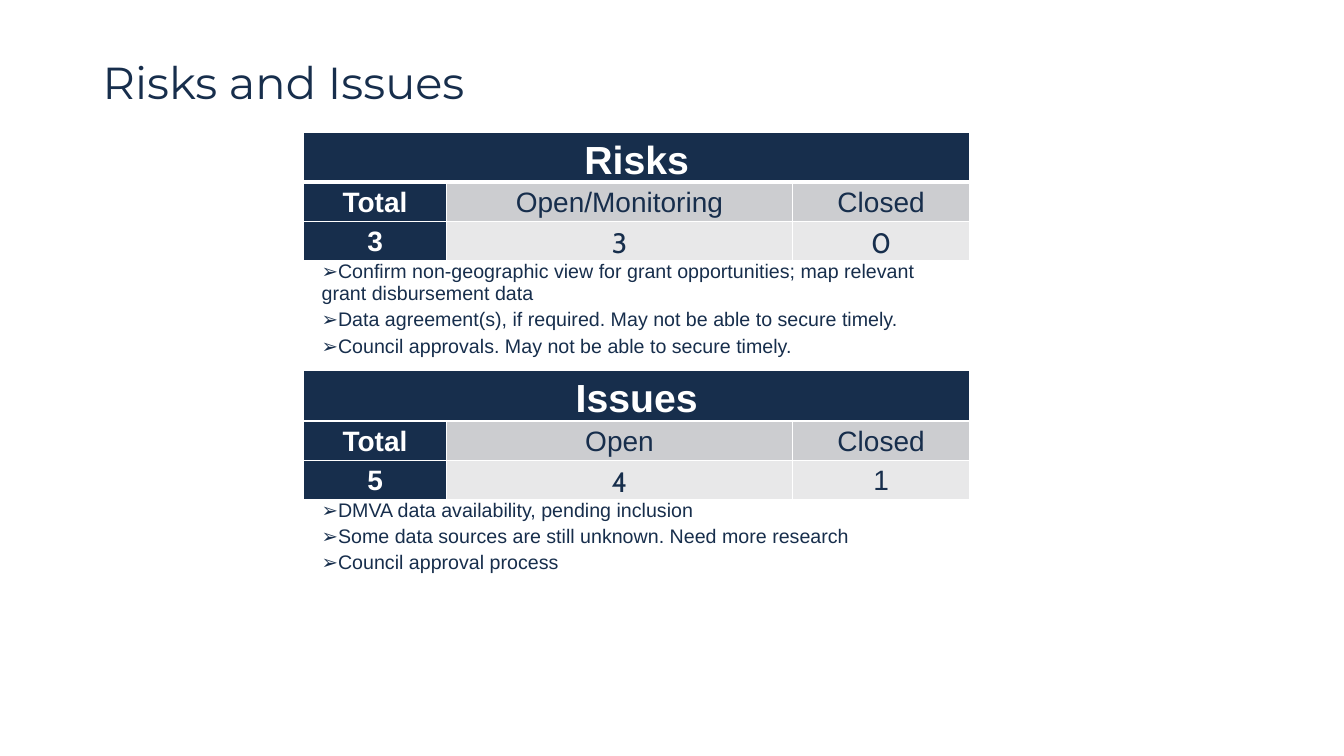
from lxml import etree
from pptx import Presentation
from pptx.dml.color import RGBColor
from pptx.enum.text import PP_ALIGN
from pptx.oxml.ns import qn
from pptx.util import Pt

PX = 9144
NAVY = RGBColor(0x17, 0x2E, 0x4C)
GREY = RGBColor(0xCC, 0xCD, 0xD0)
PALE = RGBColor(0xE8, 0xE8, 0xE9)
WHITE = RGBColor(0xFF, 0xFF, 0xFF)
CENTER = PP_ALIGN.CENTER

COLS = [142, 343, 176]
ROWS = [[47, 39, 33, 109], [47, 39, 33, 107]]
BLOCKS = [
    ("Risks", ["Total", "Open/Monitoring", "Closed"], ["3", "3", "0"],
     ["Arial", "Cabin", "Cabin"],
     ["Confirm non-geographic view for grant opportunities; map relevant grant disbursement data",
      "Data agreement(s), if required. May not be able to secure timely.",
      "Council approvals. May not be able to secure timely."]),
    ("Issues", ["Total", "Open", "Closed"], ["5", "4", "1"],
     ["Arial", "Cabin", "Arial"],
     ["DMVA data availability, pending inclusion",
      "Some data sources are still unknown. Need more research",
      "Council approval process"]),
]


def style(para, font, size, color, bold=False):
    """Format every run of a paragraph."""
    for run in para.runs:
        run.font.name = font
        run.font.size = Pt(size)
        run.font.color.rgb = color
        run.font.bold = bold


def edge(cell, top=1, bottom=1):
    """Give a cell white borders of the given point widths."""
    props = cell._tc.get_or_add_tcPr()
    for side, width in zip("LRTB", (1, 1, top, bottom)):
        line = etree.SubElement(props, qn(f"a:ln{side}"), w=str(Pt(width)))
        fill = etree.SubElement(line, qn("a:solidFill"))
        etree.SubElement(fill, qn("a:srgbClr"), val=str(WHITE))


def paint(cell, color):
    """Set the fill and margins of a cell."""
    cell.fill.solid()
    cell.fill.fore_color.rgb = color
    cell.margin_left = cell.margin_right = 18 * PX
    cell.margin_top = cell.margin_bottom = 0


def label(cell, text, font, size, color, back, bold):
    """Fill a cell with one centred line."""
    paint(cell, back)
    cell.text_frame.text = text
    para = cell.text_frame.paragraphs[0]
    para.alignment = CENTER
    para.line_spacing = 1.15
    para.space_after = Pt(3)
    style(para, font, size, color, bold)


def notes(cell, items):
    """Fill a cell with arrow bullets."""
    paint(cell, WHITE)
    cell.text_frame.text = "\n".join(items)
    for para in cell.text_frame.paragraphs:
        para.space_after = Pt(3)
        props = para._p.get_or_add_pPr()
        props.set("marL", "0")
        props.set("indent", "0")
        etree.SubElement(props, qn("a:buFont"), typeface="Arial")
        etree.SubElement(props, qn("a:buChar"), char="➢")
        style(para, "Arial", 14, NAVY)


def block(table, top, data):
    """Fill four table rows with a heading, counts and notes."""
    name, heads, counts, fonts, items = data
    for row in (top, top + 3):
        table.cell(row, 0).merge(table.cell(row, 2))
    label(table.cell(top, 0), name, "Arial", 28, WHITE, NAVY, True)
    for col, (head, count, font) in enumerate(zip(heads, counts, fonts)):
        first = col == 0
        ink = WHITE if first else NAVY
        label(table.cell(top + 1, col), head, "Arial", 20, ink,
              NAVY if first else GREY, first)
        label(table.cell(top + 2, col), count, font, 20, ink,
              NAVY if first else PALE, first)
    notes(table.cell(top + 3, 0), items)


def grid(slide, left, top):
    """Add the table of risks and issues."""
    highs = sum(ROWS, [])
    frame = slide.shapes.add_table(len(highs), len(COLS), left * PX, top * PX,
                                   sum(COLS) * PX, sum(highs) * PX)
    table = frame.table
    for col, wide in zip(table.columns, COLS):
        col.width = wide * PX
    for num, (row, high) in enumerate(zip(table.rows, highs)):
        row.height = high * PX
        for cell in row.cells:
            edge(cell, 3 if num == 1 else 1, 3 if num == 0 else 1)
    for num, data in enumerate(BLOCKS):
        block(table, num * len(ROWS[0]), data)


def title(slide, left, top, wide, high):
    """Add the slide title."""
    box = slide.shapes.add_textbox(left * PX, top * PX, wide * PX, high * PX)
    box.text_frame.word_wrap = True
    box.text_frame.text = "Risks and Issues"
    para = box.text_frame.paragraphs[0]
    para.line_spacing = 0.9
    style(para, "Montserrat", 32, NAVY)


def main():
    """Build and save the slide."""
    deck = Presentation()
    deck.slide_width, deck.slide_height = 1333 * PX, 750 * PX
    slide = deck.slides.add_slide(deck.slide_layouts[6])
    grid(slide, 301, 131)
    title(slide, 92, 55, 540, 61)
    deck.save("out.pptx")


if __name__ == "__main__":
    main()
